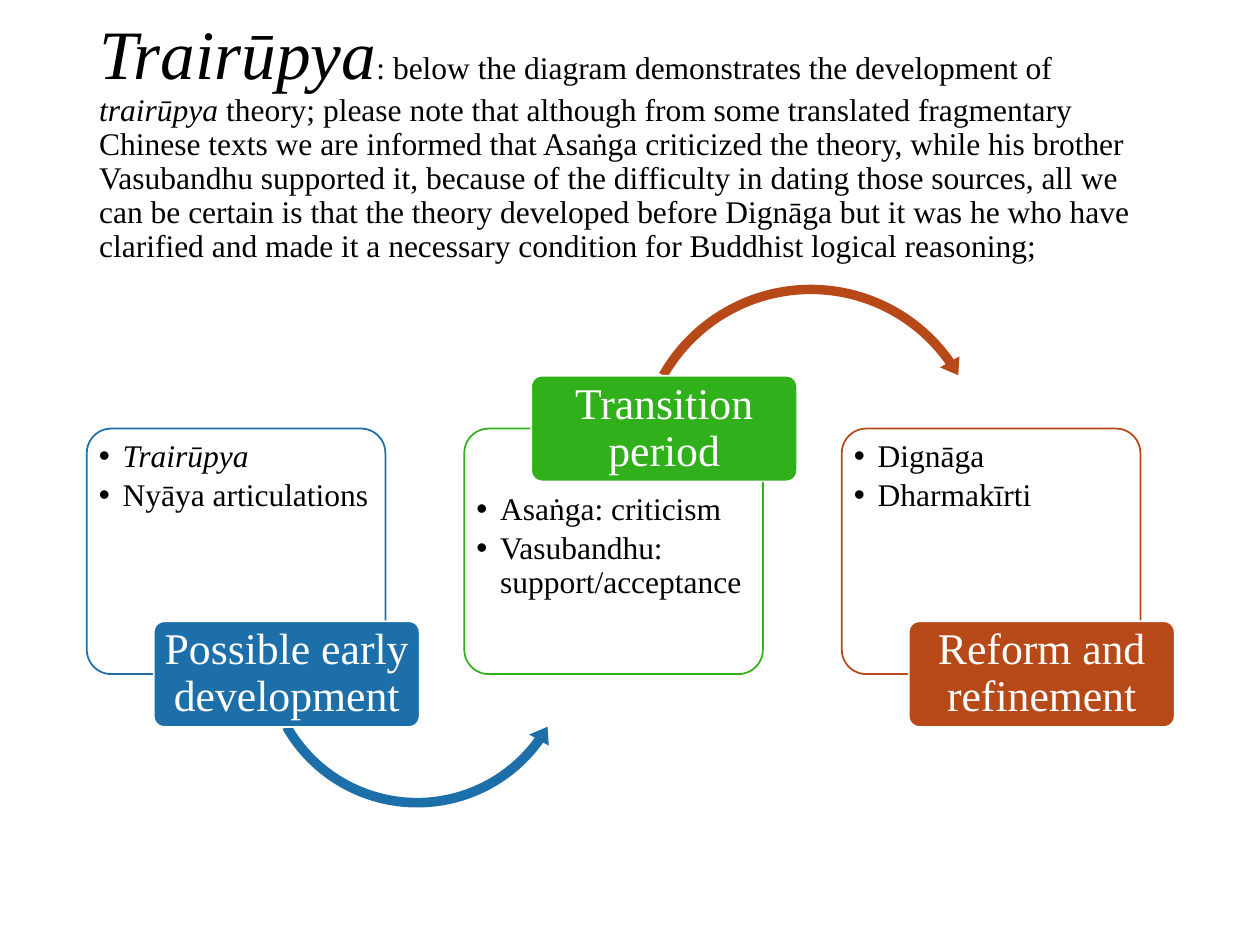
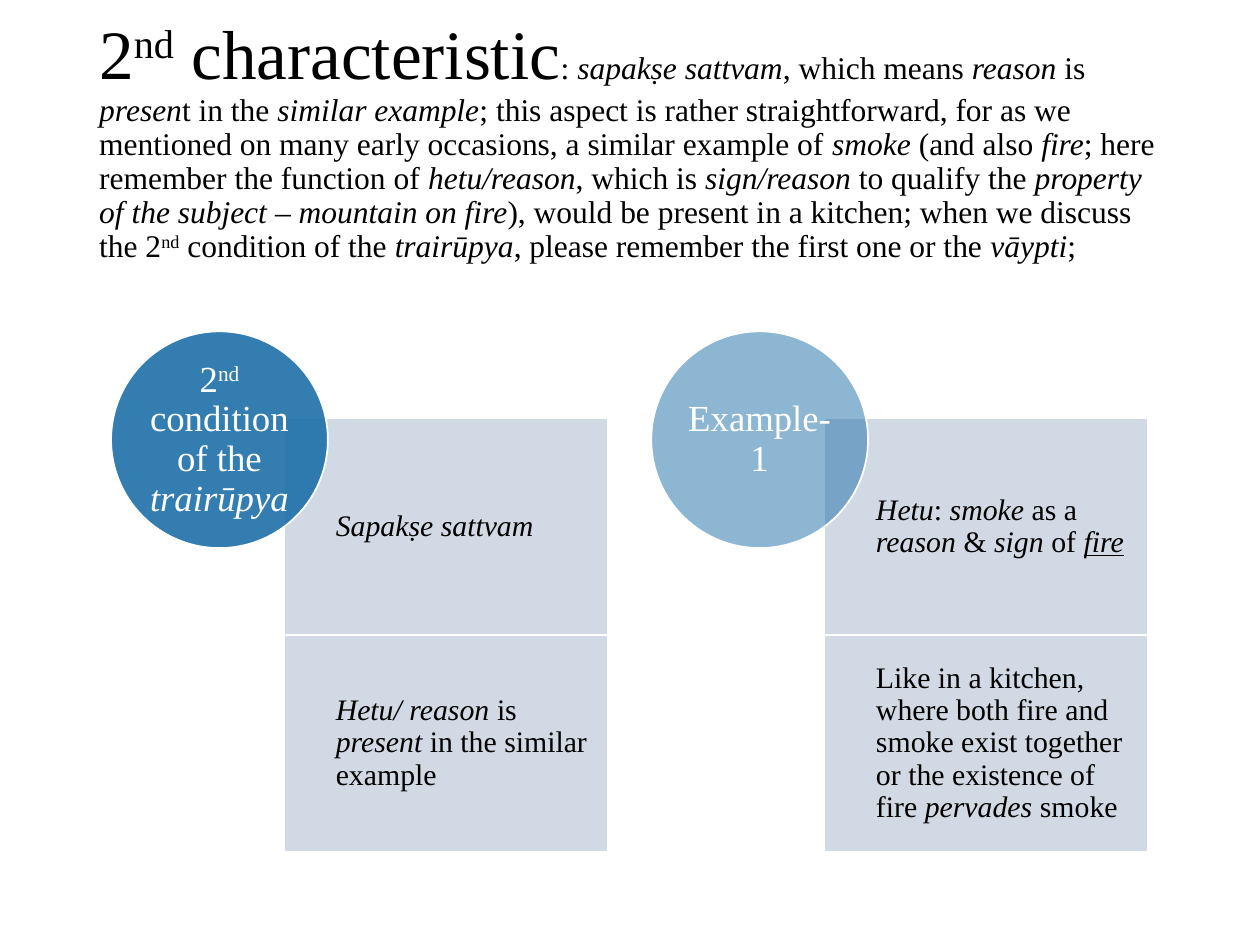
from dataclasses import dataclass

from lxml import etree
from pptx import Presentation
from pptx import util as u
from pptx.dml.color import RGBColor
from pptx.enum import shapes, text
from pptx.oxml import ns

FONT = "Times New Roman"
COLOURS = {
    "ink": "000000",
    "white": "FFFFFF",
    "early": "1D6FA9",
    "transition": "30B01B",
    "reform": "B74919",
    "panel": "CDD5E2",
}
BIG, ITALIC, RAISED, UNDERLINED = "~*^_"

CARD_LEFT, CARD_TOP, CARD_PITCH = 1.75, 8.64, 7.61
CARD_WIDTH, CARD_HEIGHT = 6.02, 4.95
LABEL_SHIFT, LABEL_WIDTH, LABEL_HEIGHT = 1.35, 5.36, 2.13
TOPIC_LEFT, TOPIC_TOP, TOPIC_PITCH = 2.24, 6.68, 10.89
DISC_SIZE = 4.37
PANEL_SHIFT, PANEL_TOP, PANEL_WIDTH = 3.48, 8.43, 6.53

TRAIRUPYA_TITLE = (
    "~*Trairūpya*~: below the diagram demonstrates the development of *trairūpya *theory; "
    "please note that although from some translated fragmentary Chinese texts we are informed "
    "that Asaṅga criticized the theory, while his brother Vasubandhu supported it, because of "
    "the difficulty in dating those sources, all we can be certain is that the theory developed "
    "before Dignāga but it was he who have clarified and made it a necessary condition for "
    "Buddhist logical reasoning;"
)
CHARACTERISTIC_TITLE = (
    "~2^nd^ characteristic~: *sapakṣe sattvam*, which means *reason* is *presen*t in the "
    "*similar example*; this aspect is rather straightforward, for as we mentioned on many "
    "early occasions, a similar example of *smoke* (and also *fire*; here remember the function "
    "of *hetu/reason*, which is *sign/reason* to qualify the *property of the subject* – "
    "*mountain on fire*), would be present in a kitchen; when we discuss the 2^nd^ condition of "
    "the *trairūpya*, please remember the first one or the *vāypti*;"
)


@dataclass(frozen=True)
class Stage:
    label: str
    points: tuple[str, ...]
    colour: str
    label_on_top: bool = False


@dataclass(frozen=True)
class Turn:
    kind: shapes.MSO_SHAPE
    left: float
    top: float
    size: float
    colour: str
    bends: tuple[float, ...]


@dataclass(frozen=True)
class Topic:
    name: str
    opacity: int
    panels: tuple[str, ...]


STAGES = (
    Stage("Possible early development", ("*Trairūpya*", "Nyāya articulations"), "early"),
    Stage("Transition period", ("Asaṅga: criticism", "Vasubandhu: support/acceptance"),
          "transition", label_on_top=True),
    Stage("Reform and refinement", ("Dignāga", "Dharmakīrti"), "reform"),
)
TURNS = (
    Turn(shapes.MSO_SHAPE.LEFT_CIRCULAR_ARROW, 5.16, 9.91, 6.5, "early",
         (0.03, 3.628, 21.383, 90.245, 0.035)),
    Turn(shapes.MSO_SHAPE.CIRCULAR_ARROW, 12.7, 5.61, 7.29, "reform",
         (0.026, 3.221, 195.024, 125.755, 0.031)),
)
TOPICS = (
    Topic("2^nd^ condition of the *trairūpya*", 90,
          ("*Sapakṣe sattvam*", "*Hetu/ reason* is *present* in the similar example")),
    Topic("Example-1", 50,
          ("*Hetu*: *smoke* as a *reason* & *sign* of *_fire_*",
           "Like in a kitchen, where both fire and smoke exist together or the existence of "
           "fire *pervades* smoke")),
)


def rgb(name: str) -> RGBColor:
    return RGBColor.from_string(COLOURS[name])


def split_marks(marked: str) -> list[tuple[str, frozenset]]:
    pieces, active, current = [], frozenset(), ""
    for letter in marked:
        if letter in (BIG, ITALIC, RAISED, UNDERLINED):
            if current:
                pieces.append((current, active))
            active, current = active ^ {letter}, ""
        else:
            current += letter
    return pieces + [(current, active)] if current else pieces


def add_bullet(paragraph) -> None:
    properties = paragraph._p.get_or_add_pPr()
    properties.set("marL", str(u.Cm(0.48)))
    properties.set("indent", str(-u.Cm(0.48)))
    etree.SubElement(properties, ns.qn("a:buFont")).set("typeface", "Arial")
    etree.SubElement(properties, ns.qn("a:buChar")).set("char", "•")


def write(frame, *lines: str, size: float = 18, colour: str = "ink", align=text.PP_ALIGN.LEFT,
          anchor=text.MSO_ANCHOR.MIDDLE, insets=(0.25, 0.13, 0.25, 0.13),
          bulleted: bool = False) -> None:
    frame.word_wrap = True
    frame.auto_size = text.MSO_AUTO_SIZE.NONE
    frame.vertical_anchor = anchor
    frame.margin_left, frame.margin_top, frame.margin_right, frame.margin_bottom = map(u.Cm, insets)
    for index, line in enumerate(lines):
        paragraph = frame.add_paragraph() if index else frame.paragraphs[0]
        paragraph.alignment = align
        paragraph.line_spacing = 0.9
        if bulleted:
            paragraph.space_after = u.Pt(2.8)
            add_bullet(paragraph)
        for words, marks in split_marks(line):
            run = paragraph.add_run()
            run.text = words
            run.font.name = FONT
            run.font.size = u.Pt(39.6 if BIG in marks else size)
            run.font.color.rgb = rgb(colour)
            run.font.italic = ITALIC in marks
            run.font.underline = UNDERLINED in marks
            if RAISED in marks:
                run._r.get_or_add_rPr().set("baseline", "30000")


def draw(slide, kind, left: float, top: float, width: float, height: float, fill: str,
         line: str | None = "white", opacity: int = 100, adjustments: tuple[float, ...] = ()):
    figure = slide.shapes.add_shape(kind, *map(u.Cm, (left, top, width, height)))
    figure.shadow.inherit = False
    for index, value in enumerate(adjustments):
        figure.adjustments[index] = value
    figure.fill.solid()
    figure.fill.fore_color.rgb = rgb(fill)
    if opacity < 100:
        tint = figure._element.spPr.find(ns.qn("a:solidFill"))[0]
        etree.SubElement(tint, ns.qn("a:alpha")).set("val", str(opacity * 1000))
    if line:
        figure.line.color.rgb = rgb(line)
        figure.line.width = u.Pt(1)
    else:
        figure.line.fill.background()
    return figure


def add_titled_slide(deck, heading: str):
    slide = deck.slides.add_slide(deck.slide_layouts[5])
    title = slide.shapes.title
    title.left, title.top, title.width, title.height = map(u.Cm, (1.75, 1.02, 21.89, 3.68))
    write(title.text_frame, heading)
    return slide


def draw_stage_card(slide, stage: Stage, left: float) -> None:
    card = draw(slide, shapes.MSO_SHAPE.ROUNDED_RECTANGLE, left, CARD_TOP, CARD_WIDTH, CARD_HEIGHT,
                "white", line=stage.colour, opacity=90, adjustments=(0.1,))
    top_inset = 0.1 + (LABEL_HEIGHT / 2 if stage.label_on_top else 0)
    write(card.text_frame, *stage.points, anchor=text.MSO_ANCHOR.TOP,
          insets=(0.1, top_inset, 0.1, 0.1), bulleted=True)


def draw_stage_label(slide, stage: Stage, left: float) -> None:
    edge = CARD_TOP if stage.label_on_top else CARD_TOP + CARD_HEIGHT
    label = draw(slide, shapes.MSO_SHAPE.ROUNDED_RECTANGLE, left + LABEL_SHIFT,
                 edge - LABEL_HEIGHT / 2, LABEL_WIDTH, LABEL_HEIGHT, stage.colour,
                 adjustments=(0.1,))
    write(label.text_frame, stage.label, size=25, colour="white", align=text.PP_ALIGN.CENTER,
          insets=(0.13, 0.08, 0.13, 0.08))


def draw_turn(slide, turn: Turn) -> None:
    draw(slide, turn.kind, turn.left, turn.top, turn.size, turn.size, turn.colour,
         line=None, adjustments=turn.bends)


def draw_topic(slide, topic: Topic, left: float) -> None:
    for row, statement in enumerate(topic.panels):
        panel = draw(slide, shapes.MSO_SHAPE.RECTANGLE, left + PANEL_SHIFT,
                     PANEL_TOP + row * DISC_SIZE, PANEL_WIDTH, DISC_SIZE, "panel", opacity=90)
        write(panel.text_frame, statement, size=17, insets=(1.05, 0.33, 0.32, 0.33))
    disc = draw(slide, shapes.MSO_SHAPE.OVAL, left, TOPIC_TOP, DISC_SIZE, DISC_SIZE, "early",
                opacity=topic.opacity)
    write(disc.text_frame, topic.name, size=21, colour="white", align=text.PP_ALIGN.CENTER,
          insets=(0, 0, 0, 0))


def main() -> None:
    deck = Presentation()
    deck.slide_width, deck.slide_height = u.Cm(25.4), u.Cm(19.05)

    development = add_titled_slide(deck, TRAIRUPYA_TITLE)
    for column, stage in enumerate(STAGES):
        left = CARD_LEFT + column * CARD_PITCH
        draw_stage_card(development, stage, left)
        if column < len(TURNS):
            draw_turn(development, TURNS[column])
        draw_stage_label(development, stage, left)

    characteristic = add_titled_slide(deck, CHARACTERISTIC_TITLE)
    for column, topic in enumerate(TOPICS):
        draw_topic(characteristic, topic, TOPIC_LEFT + column * TOPIC_PITCH)

    deck.save("out.pptx")


if __name__ == "__main__":
    main()
